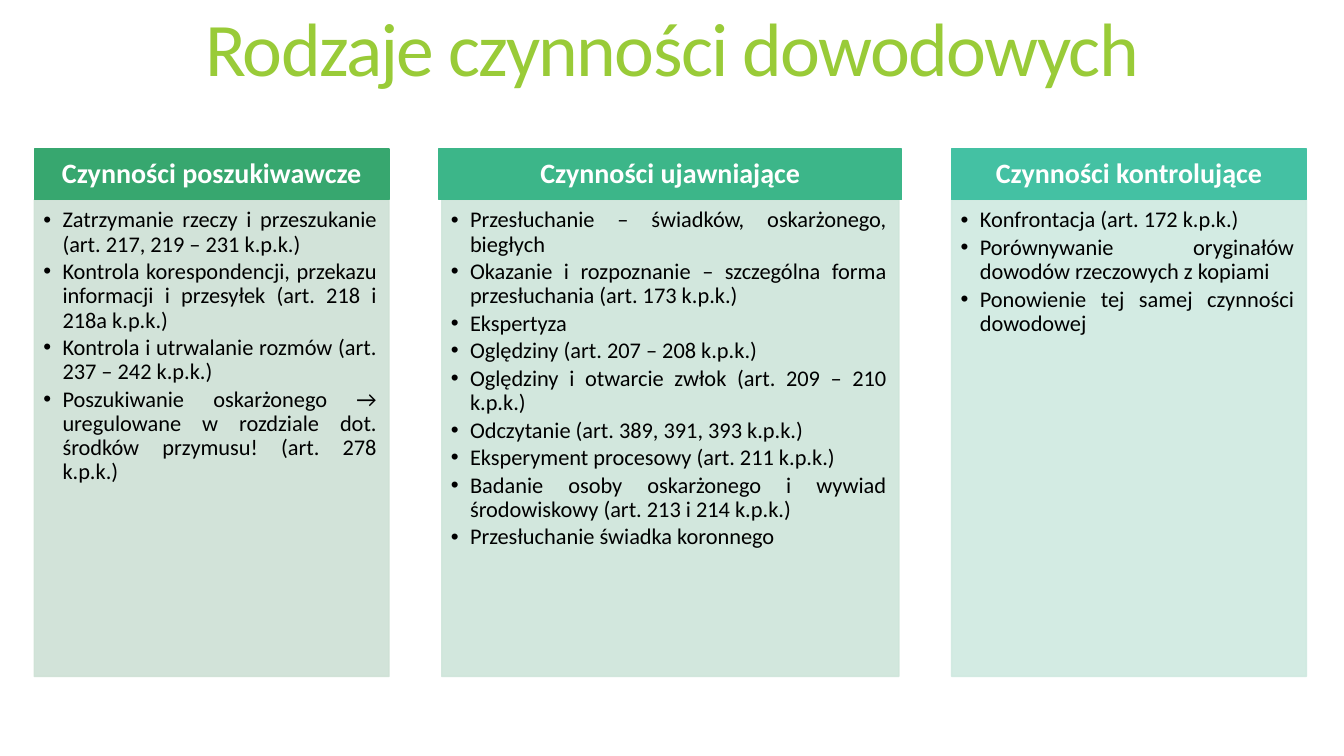
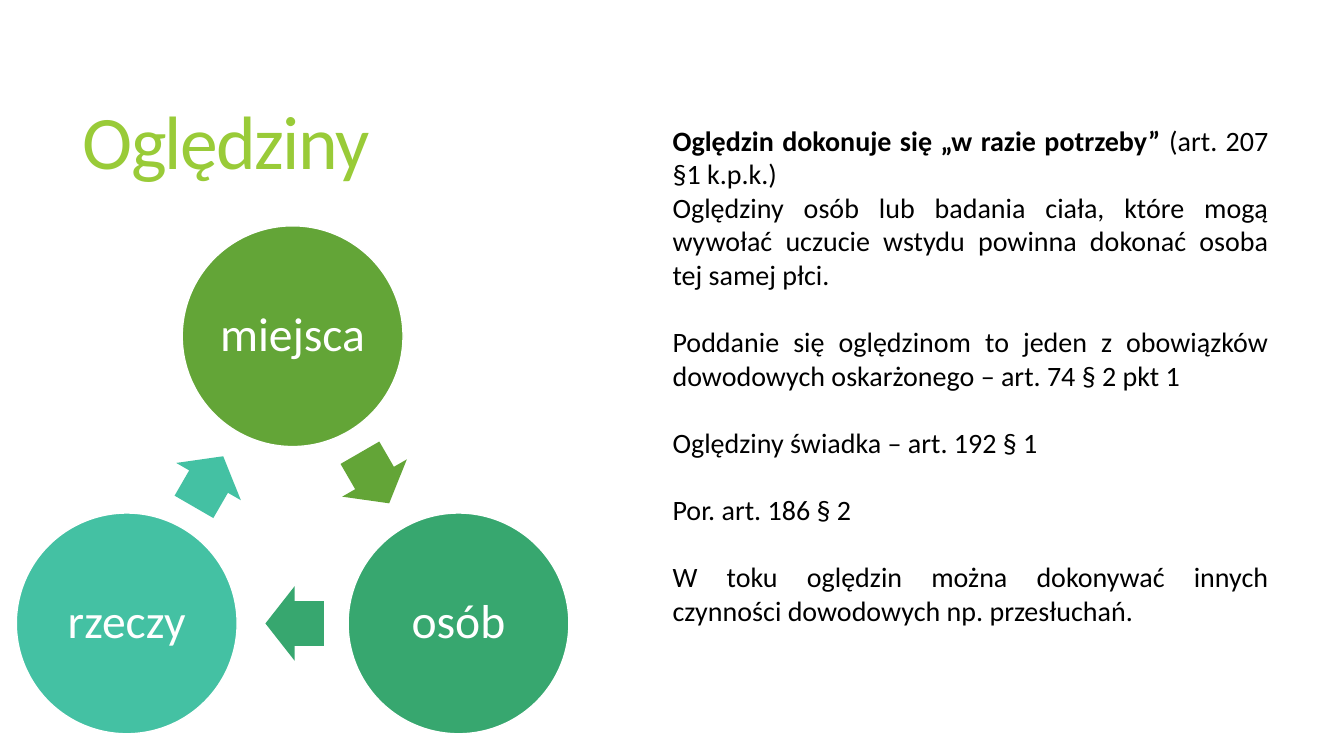
import math
from dataclasses import dataclass
from lxml import etree
from pptx import Presentation, util as u
from pptx.dml.color import RGBColor
from pptx.enum import shapes, text
from pptx.oxml.ns import qn


@dataclass(frozen=True)
class Theme:
    # Colours
    title: str = "99CB38"
    ink: str = "000000"
    white: str = "FFFFFF"
    leaf: str = "63A537"
    green: str = "37A76F"
    mint: str = "3CB689"
    teal: str = "44C1A3"
    # Type
    face: str = "Calibri"
    big: int = 54
    ring: int = 34
    head: int = 20
    item: int = 16


T = Theme()
A = text.PP_ALIGN
M = text.MSO_ANCHOR
G = shapes.MSO_SHAPE
COL = u.Inches(13.33) / 100  # the grid has 100 columns and 100 rows
ROW = u.Inches(7.5) / 100


class Deck:
    def __init__(self):
        self.prs = Presentation()
        self.prs.slide_width = round(100 * COL)
        self.prs.slide_height = round(100 * ROW)

    def page(self, layout, name, box, align):
        """Start a slide and set its title; keep its body placeholders."""
        self.slide = self.prs.slides.add_slide(self.prs.slide_layouts[layout])
        title = self.slide.shapes.title
        self.place(title, box)
        self.frame(title, M.MIDDLE)
        par = self.fill(title.text_frame.paragraphs[0], name, T.big, T.title, align, 0.85)
        par._p.get_or_add_pPr().get_or_add_defRPr().set("spc", "-120")
        self.free = [p for p in self.slide.placeholders
                     if p.placeholder_format.idx in range(1, 10)]

    def place(self, shape, box):
        x, y, w, h = box
        shape.left, shape.top = round(x * COL), round(y * ROW)
        shape.width, shape.height = round(w * COL), round(h * ROW)

    def frame(self, shape, anchor, pads=(0.1, 0.05, 0.1, 0.05)):
        box = shape.text_frame
        box.word_wrap = True
        box.auto_size = text.MSO_AUTO_SIZE.NONE
        box.vertical_anchor = anchor
        (box.margin_left, box.margin_top,
         box.margin_right, box.margin_bottom) = map(u.Inches, pads)
        return box

    def fill(self, par, words, size, color, align, lead=1.0, bold=False):
        """Fill a paragraph; words may be a list of (text, bold) runs."""
        font = par.font
        font.name, font.size = T.face, u.Pt(size)
        font.color.rgb = RGBColor.from_string(color)
        if isinstance(words, str):
            par.add_run().text = words
            font.bold = bold
        else:
            for part, heavy in words:
                run = par.add_run()
                run.text, run.font.bold = part, heavy
        par.alignment, par.line_spacing = align, lead
        par.space_before = par.space_after = u.Pt(0)
        return par

    def paint(self, shape, fill, line=None, alpha=None):
        shape.fill.solid()
        shape.fill.fore_color.rgb = RGBColor.from_string(fill)
        if line:
            shape.line.color.rgb = RGBColor.from_string(line)
            shape.line.width = u.Pt(1)
        else:
            shape.line.fill.background()
        if alpha:
            for color in shape._element.spPr.iter(qn("a:srgbClr")):
                etree.SubElement(color, qn("a:alpha")).set("val", str(alpha * 1000))

    def shape(self, kind, box, fill, line=None):
        item = self.slide.shapes.add_shape(kind, 0, 0, 0, 0)
        self.place(item, box)
        item.shadow.inherit = False
        self.paint(item, fill, line)
        return item

    def label(self, shape, words, size, pads, bold=False):
        box = self.frame(shape, M.MIDDLE, pads)
        self.fill(box.paragraphs[0], words, size, T.white, A.CENTER, 0.9, bold)

    def bullet(self, par, mark, left=0):
        props = par._p.get_or_add_pPr()
        props.set("marL", str(u.Inches(left)))
        props.set("indent", str(-u.Inches(left)))
        sign = etree.Element(qn("a:buChar" if mark else "a:buNone"))
        if mark:
            sign.set("char", mark)
        # The bullet has to stand before the default run style
        props.find(qn("a:defRPr")).addprevious(sign)

    def body(self, box, pads=(0.1, 0.05, 0.1, 0.05)):
        hold = self.free.pop(0)
        self.place(hold, box)
        return hold, self.frame(hold, M.TOP, pads)

    def pars(self, frame, rows):
        for k, row in enumerate(rows):
            yield (frame.add_paragraph() if k else frame.paragraphs[0]), row

    def column(self, x, wide, inset, tone, pale, head, items):
        """A heading bar above a tinted panel with a bulleted list."""
        top, bar, deep = 19.73, 6.67, 63.07
        cap = self.shape(G.RECTANGLE, (x, top, wide, bar), tone, tone)
        self.label(cap, head, T.head, (0.16, 0.09, 0.16, 0.09), True)
        panel, frame = self.body((x + inset, top + bar, wide - 2 * inset, deep),
                                 (0.09, 0.09, 0.12, 0.14))
        self.paint(panel, pale, pale, 90)
        for par, item in self.pars(frame, items):
            self.fill(par, item, T.item, T.ink, A.JUSTIFY, 0.9)
            par.space_after = u.Pt(2.4)
            self.bullet(par, "•", 0.19)

    def prose(self, box, rows):
        """Plain paragraphs, each with its gap above in points."""
        _, frame = self.body(box)
        for par, (words, gap) in self.pars(frame, rows):
            self.fill(par, words, T.head, T.ink, A.JUSTIFY)
            par.space_before = u.Pt(gap)
            self.bullet(par, None)

    def cycle(self, x, y, reach, size, parts):
        """Circles on a ring, an arrow after each; lengths are in rows."""
        step = 360 / len(parts)
        ratio = ROW / COL
        wide, high, back = 7.73, 9.87, 0.27

        def spot(turn, far, w, h, shift=0):
            a, b = math.radians(turn - 90), math.radians(turn)
            dx = far * math.cos(a) - shift * math.cos(b)
            dy = far * math.sin(a) - shift * math.sin(b)
            return x + (dx - w / 2) * ratio, y + dy - h / 2, w * ratio, h

        for k, (words, tone) in enumerate(parts):
            disc = self.shape(G.OVAL, spot(k * step, reach, size, size), tone, T.white)
            self.label(disc, words, T.ring, (0.05,) * 4)
            turn = (k + 0.5) * step
            mid = reach * math.cos(math.radians(step / 2))
            arrow = self.shape(G.RIGHT_ARROW, spot(turn, mid, wide, high, back), tone)
            arrow.adjustments[0], arrow.adjustments[1] = 0.6, 0.5
            arrow.rotation = turn

    def tidy(self):
        """Remove the body placeholders left empty."""
        for hold in self.free:
            hold._element.getparent().remove(hold._element)


def main():
    deck = Deck()

    # Kinds of evidentiary actions: three columns
    deck.page(4, "Rodzaje czynności dowodowych", (0, -3.6, 100, 21.2), A.CENTER)
    columns = [
        (26.4, 0, T.green, "CEE1D5", "Czynności poszukiwawcze", [
            "Zatrzymanie rzeczy i przeszukanie (art. 217, 219 – 231 k.p.k.)",
            "Kontrola korespondencji, przekazu informacji i przesyłek (art. 218 i 218a k.p.k.)",
            "Kontrola i utrwalanie rozmów (art. 237 – 242 k.p.k.)",
            "Poszukiwanie oskarżonego → uregulowane w rozdziale dot. środków przymusu! "
            "(art. 278 k.p.k.)"]),
        (34.45, 0.22, T.mint, "CEE5DA", "Czynności ujawniające", [
            "Przesłuchanie – świadków, oskarżonego, biegłych",
            "Okazanie i rozpoznanie – szczególna forma przesłuchania (art. 173 k.p.k.)",
            "Ekspertyza",
            "Oględziny (art. 207 – 208 k.p.k.)",
            "Oględziny i otwarcie zwłok (art. 209 – 210 k.p.k.)",
            "Odczytanie (art. 389, 391, 393 k.p.k.)",
            "Eksperyment procesowy (art. 211 k.p.k.)",
            "Badanie osoby oskarżonego i wywiad środowiskowy (art. 213 i 214 k.p.k.)",
            "Przesłuchanie świadka koronnego"]),
        (26.4, 0, T.teal, "CFE9E0", "Czynności kontrolujące", [
            "Konfrontacja (art. 172 k.p.k.)",
            "Porównywanie oryginałów dowodów rzeczowych z kopiami",
            "Ponowienie tej samej czynności dowodowej"]),
    ]
    x, gap = 2.55, 3.7
    for wide, *rest in columns:
        deck.column(x, wide, *rest)
        x += wide + gap
    deck.tidy()

    # Inspection: cycle on the left, rules on the right
    deck.page(1, "Oględziny", (5.4, 7.33, 88.37, 24.13), A.LEFT)
    deck.cycle(21.77, 69.8, 25.33, 29.2,
               [("miejsca", T.leaf), ("osób", T.green), ("rzeczy", T.teal)])
    deck.prose((49.29, 15.6, 45.84, 68.67), [
        ([("Oględzin dokonuje się „w razie potrzeby” ", True),
          ("(art. 207 §1 k.p.k.)", False)], 0),
        ("Oględziny osób lub badania ciała, które mogą wywołać uczucie wstydu "
         "powinna dokonać osoba tej samej płci.", 0),
        ("Poddanie się oględzinom to jeden z obowiązków dowodowych oskarżonego "
         "– art. 74 § 2 pkt 1", 24),
        ("Oględziny świadka – art. 192 § 1", 24),
        ("Por. art. 186 § 2", 24),
        ("W toku oględzin można dokonywać innych czynności dowodowych "
         "np. przesłuchań.", 24),
    ])
    deck.tidy()
    deck.prs.save("out.pptx")


if __name__ == "__main__":
    main()
